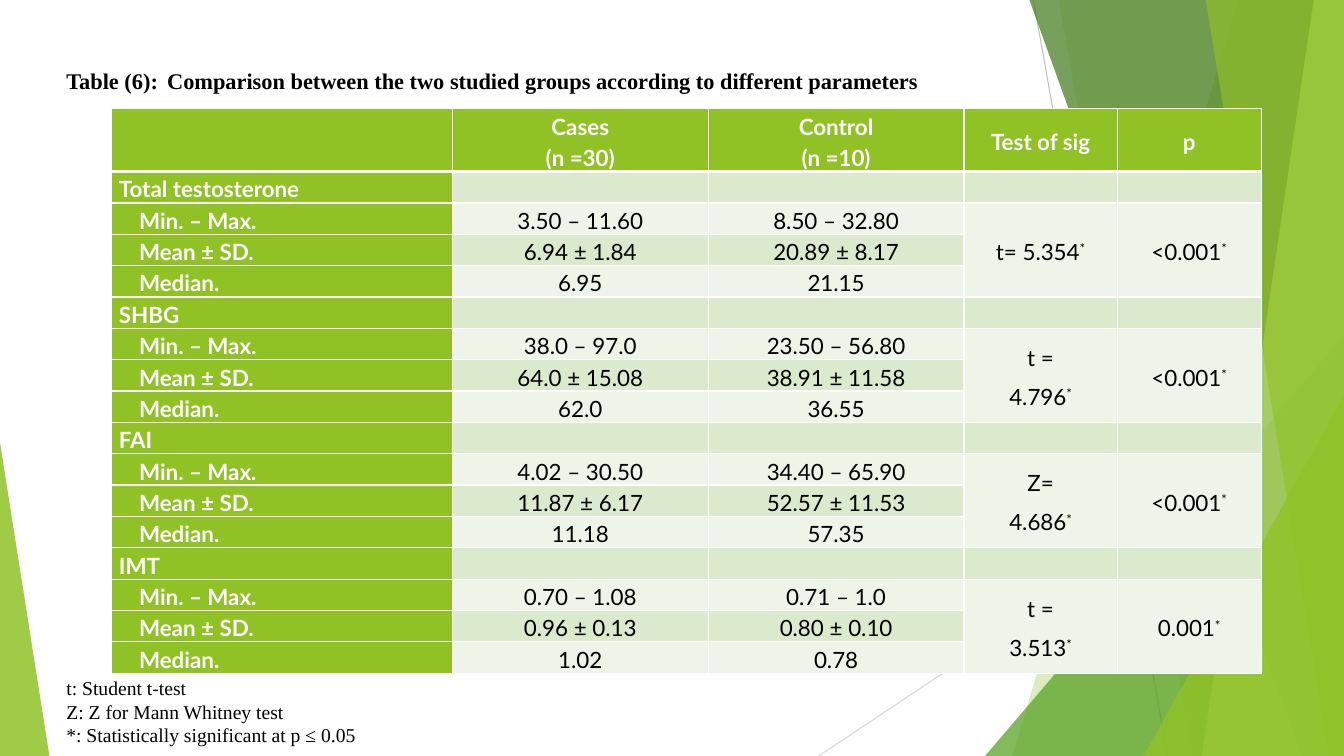
from dataclasses import dataclass

from lxml.etree import SubElement
from pptx import Presentation
from pptx.dml.color import RGBColor
from pptx.enum.shapes import MSO_CONNECTOR as Connector, MSO_SHAPE as Shape
from pptx.enum.text import MSO_ANCHOR as Anchor, PP_ALIGN as Align
from pptx.oxml.ns import qn
from pptx.util import Inches, Pt


@dataclass(frozen=True)
class Theme:
    green: str = "90C226"
    leaf: str = "54A021"
    forest: str = "3F7819"
    lime: str = "C0E474"
    band_dark: str = "DBE9CD"
    band_light: str = "EEF4E8"
    white: str = "FFFFFF"
    black: str = "000000"
    line_dark: str = "BFBFBF"
    line_light: str = "D9D9D9"
    table_font: str = "Lato"
    text_font: str = "Times New Roman"
    body_size: int = 16
    note_size: int = 14


@dataclass(frozen=True)
class Box:
    left: float
    top: float
    width: float
    height: float

    def emu(self):
        return [Inches(v) for v in (self.left, self.top, self.width, self.height)]


THEME = Theme()
PAGE = Box(0, 0, 13.33, 7.5)
COLUMN_WEIGHTS = (3.38, 2.54, 2.54, 1.52, 1.43)
HEADERS = ("", "Cases\v(n =30)", "Control\v(n =10)", "Test of sig", "p")
MEASURES = ("Min. – Max.", "Mean ± SD.", "Median.")
PARAMETERS = (
    ("Total testosterone", ("3.50 – 11.60", "6.94 ± 1.84", "6.95"),
     ("8.50 – 32.80", "20.89 ± 8.17", "21.15"), "t= 5.354*", "<0.001*"),
    ("SHBG", ("38.0 – 97.0", "64.0 ± 15.08", "62.0"),
     ("23.50 – 56.80", "38.91 ± 11.58", "36.55"), "t =\n4.796*", "<0.001*"),
    ("FAI", ("4.02 – 30.50", "11.87 ± 6.17", "11.18"),
     ("34.40 – 65.90", "52.57 ± 11.53", "57.35"), "Z=\n4.686*", "<0.001*"),
    ("IMT", ("0.70 – 1.08", "0.96 ± 0.13", "1.02"),
     ("0.71 – 1.0", "0.80 ± 0.10", "0.78"), "t =\n3.513*", "0.001*"),
)


def write(frame, text, *, size, font, color=THEME.black, bold=False, align=Align.LEFT,
          indent=0, line=None, before=0, after=0, raise_star=False):
    for index, content in enumerate(text.split("\n")):
        paragraph = frame.paragraphs[0] if index == 0 else frame.add_paragraph()
        paragraph.alignment = align
        paragraph.line_spacing = line
        paragraph.space_before, paragraph.space_after = Pt(before), Pt(after)
        if indent:
            paragraph._p.get_or_add_pPr().set("marL", str(Inches(indent)))
        if not content:
            SubElement(paragraph._p, qn("a:endParaRPr")).set("sz", str(size * 100))
            continue
        starred = raise_star and content.endswith("*")
        for part in ([content[:-1], "*"] if starred else [content]):
            for number, piece in enumerate(part.split("\v")):
                if number:
                    paragraph.add_line_break()
                run = paragraph.add_run()
                run.text = piece
                run.font.size, run.font.name, run.font.bold = Pt(size), font, bold
                run.font.color.rgb = RGBColor.from_string(color)
                if starred and part == "*":
                    run._r.get_or_add_rPr().set("baseline", "30000")


def tint(shape, color, opacity):
    shape.shadow.inherit = False
    shape.fill.solid()
    shape.fill.fore_color.rgb = RGBColor.from_string(color)
    shape.line.fill.background()
    color_node = shape._element.spPr.find(qn("a:solidFill"))[0]
    SubElement(color_node, qn("a:alpha")).set("val", str(opacity * 1000))


def add_ray(slide, start, end, color):
    ray = slide.shapes.add_connector(Connector.STRAIGHT, *map(Inches, start + end))
    ray.line.color.rgb = RGBColor.from_string(color)
    ray.line.width = Pt(0.75)
    SubElement(ray._element.spPr, qn("a:effectLst"))


def add_shard(slide, box, top_x, bottom_x, color, opacity):
    right, bottom = box.left + box.width, box.top + box.height
    builder = slide.shapes.build_freeform(Inches(top_x), Inches(box.top))
    corners = ((right, box.top), (right, bottom), (bottom_x, bottom))
    builder.add_line_segments([(Inches(x), Inches(y)) for x, y in corners])
    tint(builder.convert_to_shape(), color, opacity)


def add_corner(slide, box, apex, color, opacity):
    corner = slide.shapes.add_shape(Shape.ISOSCELES_TRIANGLE, *box.emu())
    corner.adjustments[0] = apex
    tint(corner, color, opacity)


def add_backdrop(slide, box):
    right, bottom = box.left + box.width, box.top + box.height
    add_ray(slide, (10.25, box.top), (11.58, bottom), THEME.line_dark)
    add_ray(slide, (right, 4.03), (8.12, bottom), THEME.line_light)
    add_shard(slide, box, 12.28, 10.04, THEME.green, 30)
    add_shard(slide, box, 10.5, 11.83, THEME.green, 20)
    add_corner(slide, Box(right - 3.56, bottom - 4.17, 3.56, 4.17), 1, THEME.leaf, 72)
    add_shard(slide, box, 10.21, 12.91, THEME.forest, 70)
    add_shard(slide, box, 13.03, 11.92, THEME.lime, 70)
    add_shard(slide, box, 11.96, 13.18, THEME.green, 65)
    add_corner(slide, Box(right - 1.99, bottom - 3.57, 1.99, 3.57), 1, THEME.green, 80)
    add_corner(slide, Box(box.left, bottom - 3.11, 0.49, 3.11), 0, THEME.green, 85)


def format_cell(cell, text, fill, heading, align, indent, bottom_width):
    cell.vertical_anchor = Anchor.MIDDLE
    cell.margin_left = cell.margin_right = Inches(0.07)
    cell.margin_top = cell.margin_bottom = 0
    write(cell.text_frame, text, size=THEME.body_size, font=THEME.table_font,
          color=THEME.white if heading else THEME.black, bold=heading, align=align,
          indent=indent, line=1.15, before=4, after=2, raise_star=True)
    properties = cell._tc.get_or_add_tcPr()
    for side, width in (("L", 1), ("R", 1), ("T", 1), ("B", bottom_width)):
        border = SubElement(properties, qn(f"a:ln{side}"), w=str(Pt(width)))
        paint = SubElement(border, qn("a:solidFill"))
        SubElement(paint, qn("a:srgbClr")).set("val", THEME.white)
    cell.fill.solid()
    cell.fill.fore_color.rgb = RGBColor.from_string(fill)


def table_rows():
    rows = [HEADERS]
    for name, cases, control, test, p_value in PARAMETERS:
        rows.append((name, "", "", "", ""))
        for index, values in enumerate(zip(MEASURES, cases, control)):
            rows.append(values + ((test, p_value) if index == 0 else ("", "")))
    return rows


def add_results(slide, box):
    rows = table_rows()
    table = slide.shapes.add_table(len(rows), len(COLUMN_WEIGHTS), *box.emu()).table
    for column, weight in zip(table.columns, COLUMN_WEIGHTS):
        column.width = Inches(box.width * weight / sum(COLUMN_WEIGHTS))
    for index, texts in enumerate(rows):
        header = index == 0
        table.rows[index].height = Inches(box.height / (len(rows) + 1) * (2 if header else 1))
        band = THEME.band_dark if index % 2 else THEME.band_light
        for column, text in enumerate(texts):
            heading = header or column == 0
            format_cell(table.cell(index, column), text, THEME.green if heading else band,
                        heading, Align.CENTER if column else Align.LEFT,
                        0.2 if column == 0 and text in MEASURES else 0, 3 if header else 1)
    for first in range(2, len(rows), len(MEASURES) + 1):
        for column in (3, 4):
            last = table.cell(first + len(MEASURES) - 1, column)
            table.cell(first, column).merge(last)


def add_text(slide, box, text, **style):
    frame = slide.shapes.add_textbox(*box.emu()).text_frame
    frame.word_wrap = True
    frame.margin_top = frame.margin_bottom = 0
    frame.vertical_anchor = Anchor.MIDDLE
    write(frame, text, font=THEME.text_font, **style)


def build_slide(presentation, page):
    slide = presentation.slides.add_slide(presentation.slide_layouts[6])
    add_backdrop(slide, page)
    add_results(slide, Box(1.11, 1.08, 11.4, 5.6))
    add_text(slide, Box(0.56, 0.65, 9.5, 0.3),
             "Table (6):\tComparison between the two studied groups according to different parameters",
             size=THEME.body_size, bold=True)
    add_text(slide, Box(0.56, 6.71, 7, 0.7),
             "t: Student t-test\nZ: Z for Mann Whitney test\n"
             "*: Statistically significant at p ≤ 0.05", size=THEME.note_size)


def main():
    presentation = Presentation()
    presentation.slide_width, presentation.slide_height = Inches(PAGE.width), Inches(PAGE.height)
    build_slide(presentation, PAGE)
    presentation.save("out.pptx")


if __name__ == "__main__":
    main()
